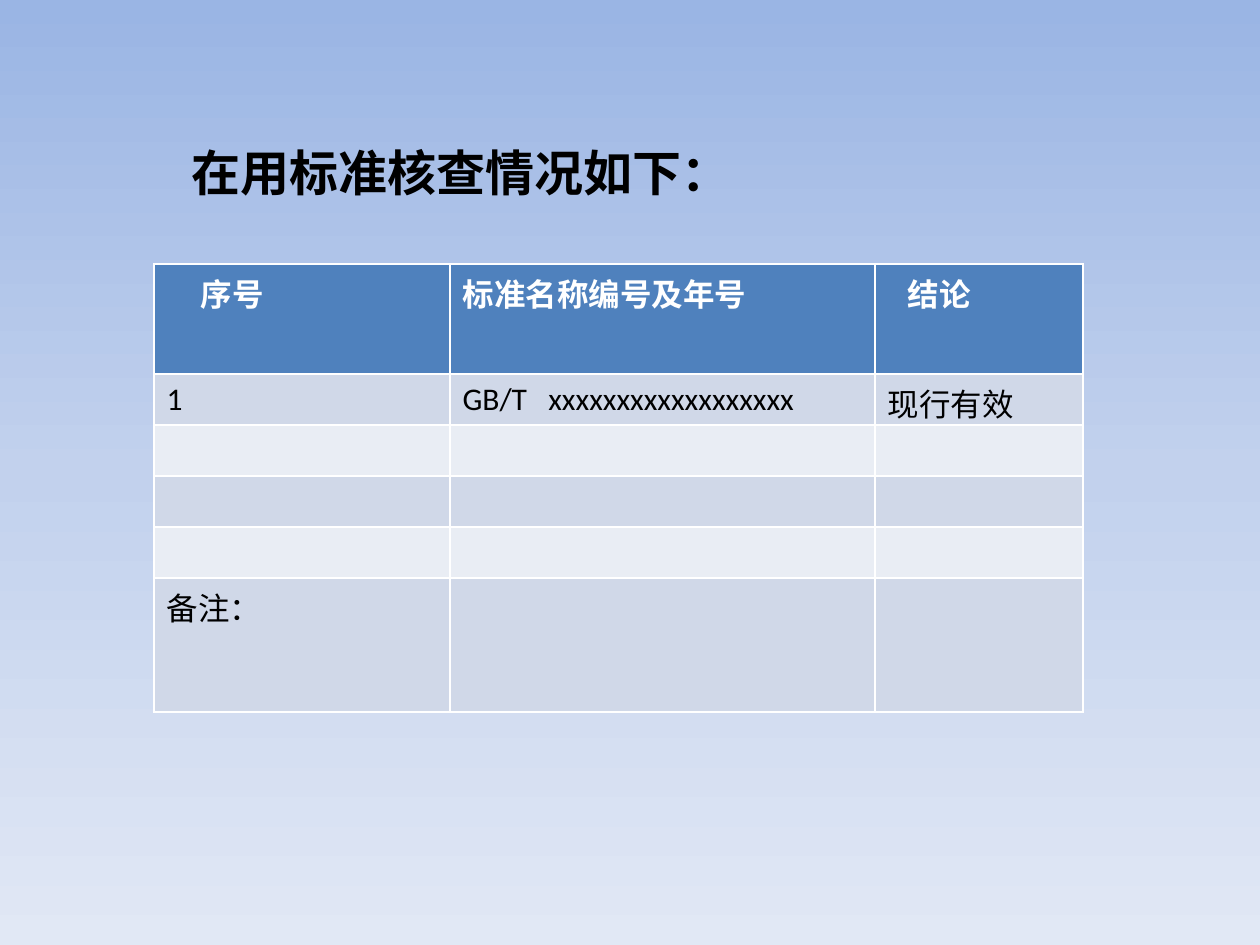
"""Build a slide with a heading and a table of standards in use."""
from copy import deepcopy

from pptx import Presentation
from pptx import util as u
from pptx.dml.color import RGBColor
from pptx.oxml import ns

PX = 914400 // 126
BLACK = RGBColor(0x00, 0x00, 0x00)
WHITE = RGBColor(0xFF, 0xFF, 0xFF)
HEADER = RGBColor(0x4F, 0x81, 0xBD)
BANDS = [RGBColor(0xE9, 0xED, 0xF4), RGBColor(0xD0, 0xD8, 0xE8)]
SKY = [
    (0, RGBColor(0x9A, 0xB5, 0xE4)),
    (0.5, RGBColor(0xC2, 0xD1, 0xED)),
    (1, RGBColor(0xE1, 0xE8, 0xF5)),
]


def write(paragraph, words, size, color, bold):
    run = paragraph.add_run()
    run.text = words
    run.font.color.rgb = color
    settings = {"name": "Calibri", "size": u.Pt(size), "bold": bold}
    for name, value in settings.items():
        setattr(run.font, name, value)


presentation = Presentation()
presentation.slide_width = u.Inches(10)
presentation.slide_height = u.Inches(7.5)
slide = presentation.slides.add_slide(presentation.slide_layouts[6])

background = slide.background.fill
background.gradient()
background.gradient_angle = 270
stop_list = next(slide._element.iter(ns.qn("a:gsLst")))
stop_list.append(deepcopy(stop_list[0]))
for stop, (position, color) in zip(background.gradient_stops, SKY):
    stop.position = position
    stop.color.rgb = color

heading = slide.shapes.add_textbox(123 * PX, 86 * PX, 963 * PX, 547 * PX)
frame = heading.text_frame
frame_format = {"word_wrap": True, "margin_left": 69 * PX, "margin_top": 56 * PX}
for name, value in frame_format.items():
    setattr(frame, name, value)
write(frame.paragraphs[0], "在用标准核查情况如下：", 28, BLACK, True)

widths = [296, 425, 208]
heights = [110, 51, 51, 51, 51, 134]
rows = [
    ["序号", "标准名称编号及年号", "结论"],
    ["1", "GB/T   xxxxxxxxxxxxxxxxxx", "现行有效"],
    ["", "", ""],
    ["", "", ""],
    ["", "", ""],
    ["备注：", "", ""],
]
header_margins = [47, 13, 33]

table = slide.shapes.add_table(
    len(rows), len(widths), 154 * PX, 264 * PX, sum(widths) * PX, sum(heights) * PX
).table
for column, width in zip(table.columns, widths):
    column.width = width * PX
for row, height in zip(table.rows, heights):
    row.height = height * PX

for row_index, row in enumerate(rows):
    is_header = row_index == 0
    for column_index, words in enumerate(row):
        cell = table.cell(row_index, column_index)
        cell.fill.solid()
        cell.fill.fore_color.rgb = HEADER if is_header else BANDS[row_index % 2]
        if is_header:
            cell.margin_left = header_margins[column_index] * PX
        if words:
            color = WHITE if is_header else BLACK
            write(cell.text_frame.paragraphs[0], words, 18, color, is_header)

presentation.save("out.pptx")
